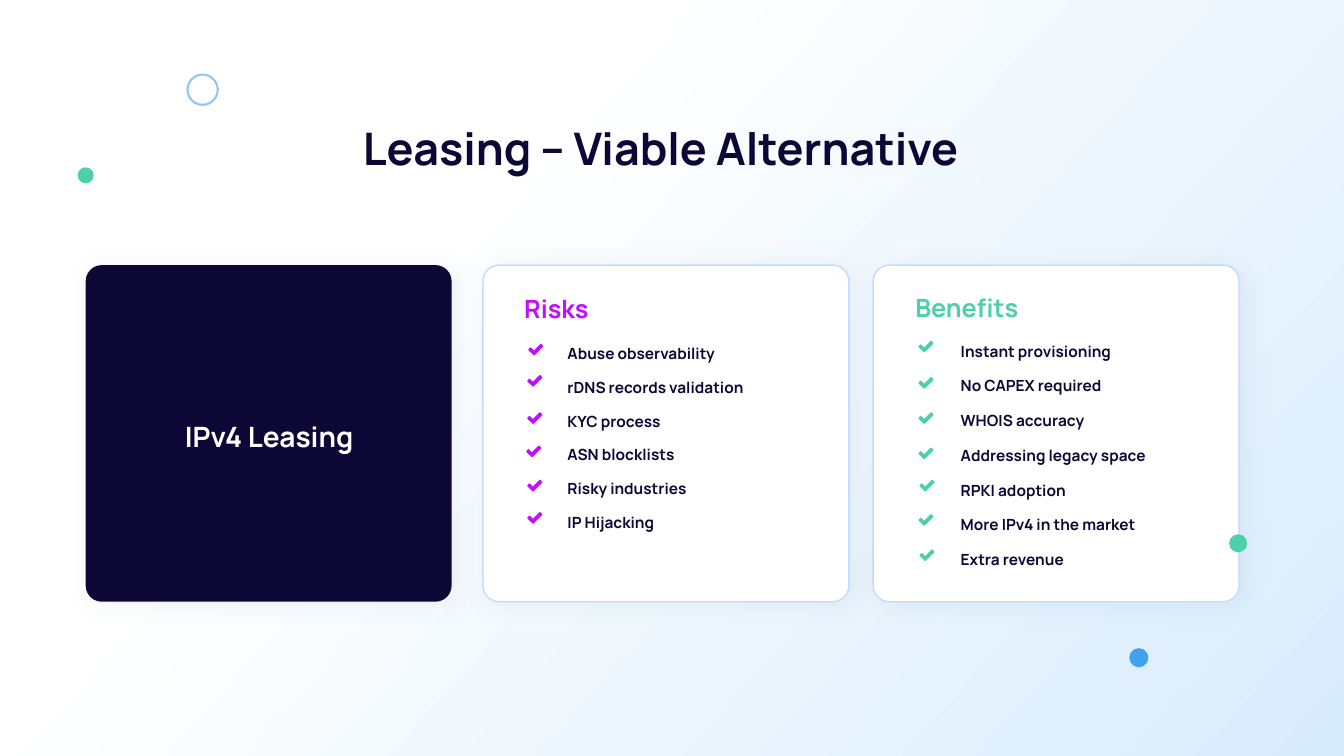
from copy import deepcopy

from lxml.etree import SubElement
from pptx import Presentation
from pptx.dml.color import RGBColor
from pptx.enum.shapes import MSO_SHAPE
from pptx.enum.text import MSO_AUTO_SIZE, PP_ALIGN
from pptx.oxml.ns import qn
from pptx.util import Inches, Pt

HUES = {
    "navy": "0D0736", "white": "FFFFFF", "pale": "D9ECFC", "edge": "C3DBFF",
    "shade": "789FBA", "pink": "C20EFF", "green": "4DD0A9",
    "blue": "41A1F1", "sky": "8DC7F7",
}
TICK = [(149, 24), (148, 30), (75, 103), (63, 113), (57, 115), (50, 113),
        (38, 100), (3, 67), (0, 60), (3, 53), (16, 39), (21, 36), (27, 39),
        (57, 67), (118, 5), (124, 0), (130, 3), (145, 18)]
RISKS = ["Abuse observability", "rDNS records validation", "KYC process",
         "ASN blocklists", "Risky industries", "IP Hijacking"]
GAINS = ["Instant provisioning", "No CAPEX required", "WHOIS accuracy",
         "Addressing legacy space", "RPKI adoption",
         "More IPv4 in the market", "Extra revenue"]
RISK_TICKS = [(5.24, 3.41), (5.23, 3.72), (5.23, 4.09), (5.22, 4.42),
              (5.23, 4.76), (5.23, 5.08)]
GAIN_TICKS = [(9.11, 3.38), (9.11, 3.74), (9.11, 4.09), (9.11, 4.44),
              (9.12, 4.76), (9.11, 5.1), (9.12, 5.45)]


class Board:
    """Draws styled elements on one slide."""

    def __init__(self, slide, font="Manrope"):
        self.slide = slide
        self.shapes = slide.shapes
        self.font = font

    def hue(self, name):
        return RGBColor.from_string(HUES[name])

    def backdrop(self):
        fill = self.slide.background.fill
        fill.gradient()
        fill.gradient_angle = 318
        for stop, name in zip(fill.gradient_stops, ("white", "pale")):
            stop.color.rgb = self.hue(name)
        first = next(self.slide.element.iter(qn("a:gs")))
        middle = deepcopy(first)
        middle.set("pos", "31000")
        first.addnext(middle)

    def paint(self, shape, fill=None, line=None, width=1):
        shape.shadow.inherit = False
        if fill:
            shape.fill.solid()
            shape.fill.fore_color.rgb = self.hue(fill)
        else:
            shape.fill.background()
        if line:
            shape.line.color.rgb = self.hue(line)
            shape.line.width = Pt(width)
        else:
            shape.line.fill.background()

    def card(self, left, fill, line=None):
        card = self.shapes.add_shape(
            MSO_SHAPE.ROUNDED_RECTANGLE, Inches(left), Inches(2.63),
            Inches(3.63), Inches(3.34))
        card.adjustments[0] = 0.048
        self.paint(card, fill, line)
        effects = card.element.spPr.find(qn("a:effectLst"))
        shadow = SubElement(
            effects, qn("a:outerShdw"), blurRad=str(Pt(17.7)),
            dist=str(Pt(4)), dir=str(26 * 60000), algn="tl", rotWithShape="0")
        color = SubElement(shadow, qn("a:srgbClr"), val=HUES["shade"])
        SubElement(color, qn("a:alpha"), val="13000")

    def dot(self, left, top, size, fill=None, line=None):
        dot = self.shapes.add_shape(
            MSO_SHAPE.OVAL, Inches(left), Inches(top),
            Inches(size), Inches(size))
        self.paint(dot, fill, line, 1.5)

    def text(self, place, lines, size, color, align=PP_ALIGN.LEFT,
             wrap=False, pitch=None):
        box = self.shapes.add_textbox(*map(Inches, place))
        frame = box.text_frame
        frame.text = "\n".join(lines)
        frame.word_wrap = wrap
        frame.auto_size = MSO_AUTO_SIZE.SHAPE_TO_FIT_TEXT
        for para in frame.paragraphs:
            para.alignment = align
            if pitch:
                para.line_spacing = Pt(pitch)
            for run in para.runs:
                run.font.name = self.font
                run.font.size = Pt(size)
                run.font.bold = True
                run.font.color.rgb = self.hue(color)

    def ticks(self, spots, color):
        for left, top in spots:
            path = self.shapes.build_freeform(*TICK[0], scale=Inches(1) / 1000)
            path.add_line_segments(TICK[1:], close=True)
            tick = path.convert_to_shape(Inches(left), Inches(top))
            self.paint(tick, color)


def main():
    deck = Presentation()
    deck.slide_width, deck.slide_height = Inches(13.33), Inches(7.5)
    board = Board(deck.slides.add_slide(deck.slide_layouts[6]))
    board.backdrop()

    board.card(0.85, "navy")
    for left in (8.66, 4.79):
        board.card(left, "white", "edge")

    board.text((0.42, 1.15, 12.27, 0.64), ["Leasing – Viable Alternative"],
               32, "navy", PP_ALIGN.CENTER, True)
    board.text((1.07, 4.11, 3.2, 0.44), ["IPv4 Leasing"],
               20, "white", PP_ALIGN.CENTER, True)
    board.text((9.43, 3.18, 2.21, 2.51), GAINS, 11, "navy", pitch=24.8)
    board.text((5.53, 3.21, 2.08, 2.08), RISKS, 11, "navy", pitch=24.2)
    board.text((5.1, 2.86, 0.88, 0.4), ["Risks"], 18, "pink")
    board.text((8.98, 2.85, 1.26, 0.4), ["Benefits"], 18, "green")

    board.ticks(RISK_TICKS, "pink")
    board.ticks(GAIN_TICKS, "green")

    board.dot(11.2, 6.43, 0.19, "blue")
    board.dot(12.19, 5.3, 0.18, "green")
    board.dot(1.86, 0.74, 0.3, line="sky")
    board.dot(0.77, 1.66, 0.16, "green")
    deck.save("out.pptx")


if __name__ == "__main__":
    main()
